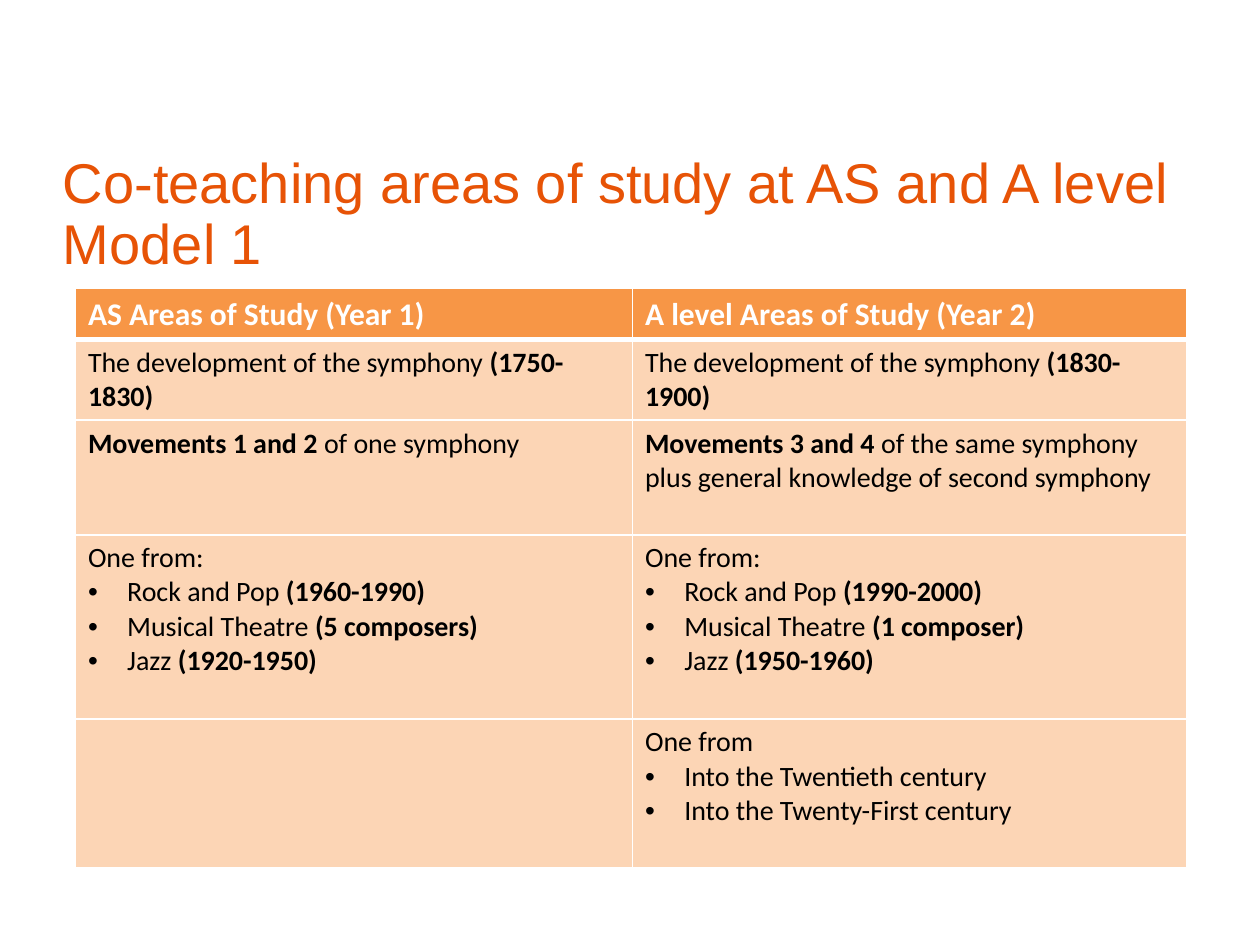
import pptx
import pptx.dml.color
import pptx.enum.text
import pptx.oxml.ns
import pptx.util
from lxml import etree

Cm = pptx.util.Cm
Pt = pptx.util.Pt

COLOURS = {
    "title": "E75306",
    "header": "F79646",
    "body": "FCD5B5",
    "white": "FFFFFF",
    "black": "000000",
}

TITLE = ["Co-teaching areas of study at AS and A level", "Model 1"]

# Asterisk pairs enclose bold words; a leading bullet starts a list item
ROWS = [
    (["**AS Areas of Study (Year 1)**"],
     ["**A level Areas of Study (Year 2)**"]),
    (["The development of the symphony **(1750-1830)**"],
     ["The development of the symphony **(1830-1900)**"]),
    (["**Movements 1 and 2 **of one symphony"],
     ["**Movements 3 and 4 **of the same symphony plus general knowledge of second symphony"]),
    (["One from:", "•Rock and Pop **(1960-1990)**",
      "•Musical Theatre **(5 composers)**", "•Jazz **(1920-1950)**"],
     ["One from:", "•Rock and Pop **(1990-2000)**",
      "•Musical Theatre **(1 composer)**", "•Jazz **(1950-1960)**"]),
    ([],
     ["One from", "•Into the Twentieth century", "•Into the Twenty-First century"]),
]
COLUMN_WIDTHS = [11.23, 11.18]
ROW_HEIGHTS = [1.02, 1.63, 2.31, 3.71, 3.0]


def colour(name):
    return pptx.dml.color.RGBColor.from_string(COLOURS[name])


def add_bullet(para, indent=0.79):
    properties = para._p.get_or_add_pPr()
    properties.set("marL", str(Cm(indent)))
    properties.set("indent", str(-Cm(indent)))
    font = etree.SubElement(properties, pptx.oxml.ns.qn("a:buFont"))
    font.set("typeface", "Arial")
    bullet = etree.SubElement(properties, pptx.oxml.ns.qn("a:buChar"))
    bullet.set("char", "•")


def write_text(frame, lines, font="Calibri", size=16, fill="black", spacing=None):
    for index, line in enumerate(lines):
        para = frame.paragraphs[0] if index == 0 else frame.add_paragraph()
        if line.startswith("•"):
            add_bullet(para)
        if spacing:
            para.line_spacing = spacing
        for part, words in enumerate(line.lstrip("•").split("**")):
            if not words:
                continue
            span = para.add_run()
            span.text = words
            span.font.name = font
            span.font.size = Pt(size)
            span.font.bold = part % 2 == 1
            span.font.color.rgb = colour(fill)


def add_borders(cell, widths):
    properties = cell._tc.get_or_add_tcPr()
    for side, width in widths.items():
        line = etree.SubElement(properties, pptx.oxml.ns.qn(f"a:ln{side}"))
        line.set("w", str(Pt(width)))
        fill = etree.SubElement(line, pptx.oxml.ns.qn("a:solidFill"))
        shade = etree.SubElement(fill, pptx.oxml.ns.qn("a:srgbClr"))
        shade.set("val", COLOURS["white"])


def add_title(page, left, top, width, height):
    box = page.shapes.add_textbox(Cm(left), Cm(top), Cm(width), Cm(height))
    frame = box.text_frame
    frame.word_wrap = True
    frame.vertical_anchor = pptx.enum.text.MSO_ANCHOR.MIDDLE
    write_text(frame, TITLE, font="Arial", size=32, fill="title", spacing=0.9)


def add_study_table(page, left, top):
    table = page.shapes.add_table(
        len(ROWS), len(COLUMN_WIDTHS), Cm(left), Cm(top),
        Cm(sum(COLUMN_WIDTHS)), Cm(sum(ROW_HEIGHTS))).table
    for column, width in zip(table.columns, COLUMN_WIDTHS):
        column.width = Cm(width)
    for row, height in zip(table.rows, ROW_HEIGHTS):
        row.height = Cm(height)

    for row_index, row in enumerate(ROWS):
        is_header = row_index == 0
        for column_index, lines in enumerate(row):
            cell = table.cell(row_index, column_index)
            # A thick rule parts the header from the body
            add_borders(cell, {"L": 1, "R": 1,
                               "T": 3 if row_index == 1 else 1,
                               "B": 3 if is_header else 1})
            cell.fill.solid()
            cell.fill.fore_color.rgb = colour("header" if is_header else "body")
            write_text(cell.text_frame, lines,
                       size=18 if is_header else 16,
                       fill="white" if is_header else "black")


def main():
    deck = pptx.Presentation()
    deck.slide_width = Cm(25.4)
    deck.slide_height = Cm(19.05)
    page = deck.slides.add_slide(deck.slide_layouts[6])
    add_title(page, left=1.02, top=2.9, width=23.39, height=2.9)
    add_study_table(page, left=1.52, top=5.82)
    deck.save("out.pptx")


if __name__ == "__main__":
    main()
